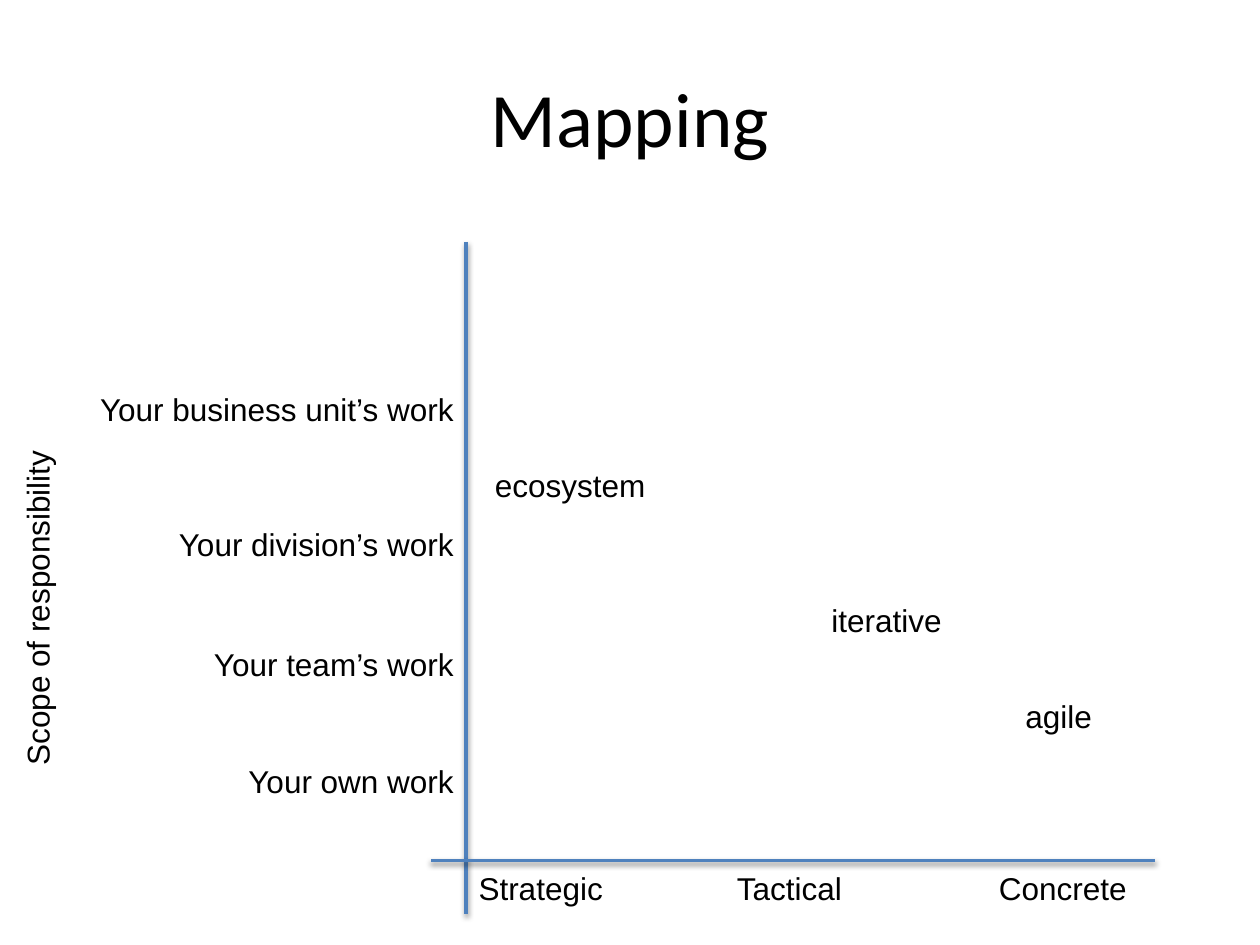
from lxml.etree import SubElement
from pptx import Presentation
from pptx.dml.color import RGBColor
from pptx.enum.shapes import MSO_CONNECTOR
from pptx.enum.text import MSO_ANCHOR, MSO_AUTO_SIZE, PP_ALIGN
from pptx.oxml.ns import qn
from pptx.util import Inches, Pt

BLACK, BLUE = "000000", "4F81BD"
LABEL_HEIGHT = 0.4
SCOPE_RIGHT = 3.7  # scope labels end at the vertical axis
STAGE_TOP = 6.85   # stage labels sit below the horizontal axis

# Text, top, width
SCOPES = [
    ("Your own work", 6, 1.85),
    ("Your team’s work", 5.07, 2.13),
    ("Your division’s work", 4.12, 2.4),
    ("Your business unit’s work", 3.05, 3.04),
]
# Text, left, width
STAGES = [
    ("Strategic", 3.7, 1.2),
    ("Tactical", 5.75, 1.04),
    ("Concrete", 7.83, 1.23),
]
# Text, left, top, width
METHODS = [
    ("ecosystem", 3.83, 3.65, 1.41),
    ("agile", 8.04, 5.48, 0.73),
    ("iterative", 6.5, 4.72, 1.09),
]


def color(value):
    return RGBColor.from_string(value)


def format_text(paragraph, font_name, size, alignment):
    paragraph.alignment = alignment
    for span in paragraph.runs:
        span.font.name = font_name
        span.font.size = Pt(size)
        span.font.color.rgb = color(BLACK)


def set_title(page, text):
    title = page.shapes.title
    title.left, title.top = Inches(0.5), Inches(0.3)
    title.width, title.height = Inches(9), Inches(1.25)
    title.text_frame.text = text
    title.text_frame.vertical_anchor = MSO_ANCHOR.MIDDLE
    format_text(title.text_frame.paragraphs[0], "Calibri", 44, PP_ALIGN.CENTER)


def add_label(page, text, left, top, width, alignment=PP_ALIGN.LEFT, rotation=0):
    box = page.shapes.add_textbox(
        Inches(left), Inches(top), Inches(width), Inches(LABEL_HEIGHT))
    box.rotation = rotation
    frame = box.text_frame
    frame.text = text
    frame.word_wrap = False
    frame.auto_size = MSO_AUTO_SIZE.SHAPE_TO_FIT_TEXT
    format_text(frame.paragraphs[0], "Arial", 18, alignment)


def add_axis(page, x1, y1, x2, y2):
    axis = page.shapes.add_connector(
        MSO_CONNECTOR.STRAIGHT, Inches(x1), Inches(y1), Inches(x2), Inches(y2))
    axis.line.color.rgb = color(BLUE)
    axis.line.width = Pt(2)
    # Soft shadow straight below the line
    effects = SubElement(axis._element.spPr, qn("a:effectLst"))
    shadow = SubElement(
        effects, qn("a:outerShdw"), blurRad=str(Pt(3.1)), dist=str(Pt(1.6)),
        dir="5400000", rotWithShape="0")
    tint = SubElement(shadow, qn("a:srgbClr"), val=BLACK)
    SubElement(tint, qn("a:alpha"), val="38000")


def main():
    deck = Presentation()
    deck.slide_width, deck.slide_height = Inches(10), Inches(7.5)
    page = deck.slides.add_slide(deck.slide_layouts[5])
    set_title(page, "Mapping")

    # Axes
    add_axis(page, 3.7, 1.92, 3.7, 7.25)
    add_axis(page, 3.42, 6.83, 9.17, 6.83)

    # Vertical axis: title and scopes
    add_label(page, "Scope of responsibility", -1.07, 4.61, 2.73, rotation=270)
    for text, top, width in SCOPES:
        add_label(page, text, SCOPE_RIGHT - width, top, width, PP_ALIGN.RIGHT)

    # Horizontal axis: stages
    for text, left, width in STAGES:
        add_label(page, text, left, STAGE_TOP, width)

    # Methods placed on the map
    for text, left, top, width in METHODS:
        add_label(page, text, left, top, width)

    deck.save("out.pptx")


if __name__ == "__main__":
    main()
